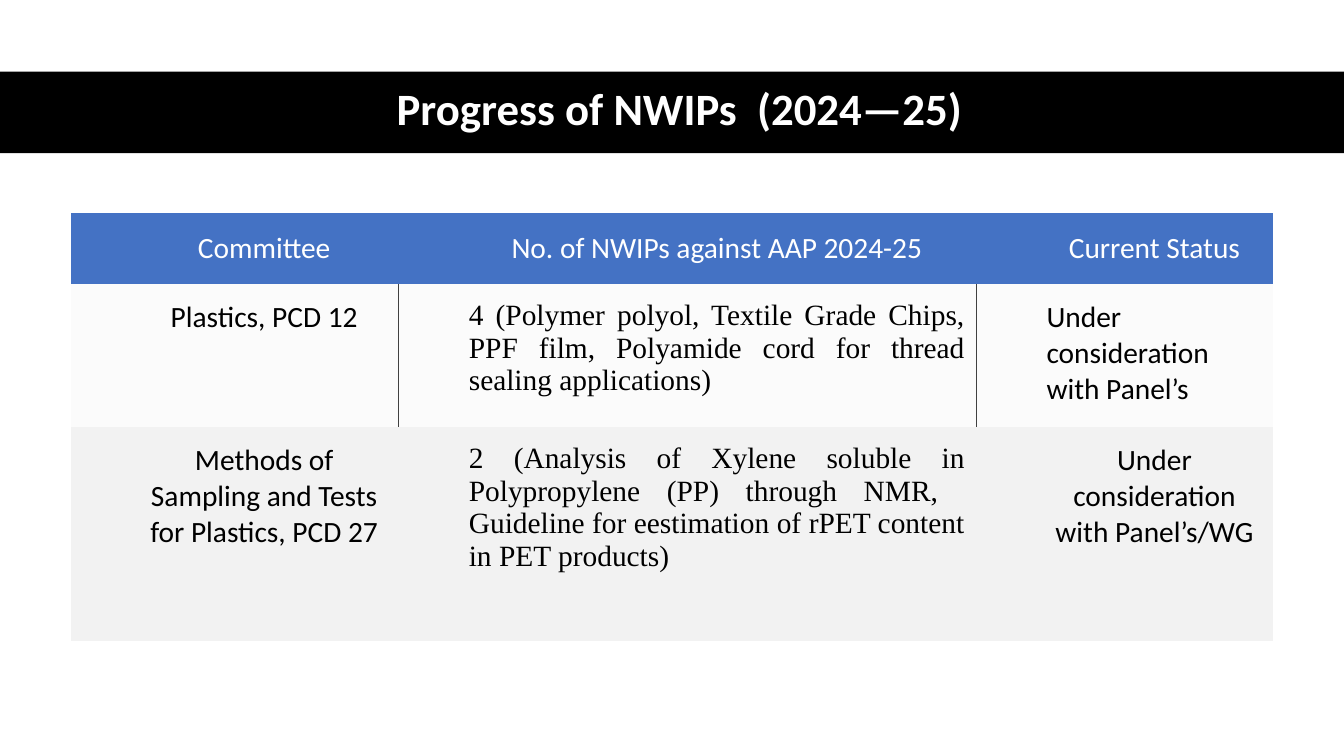
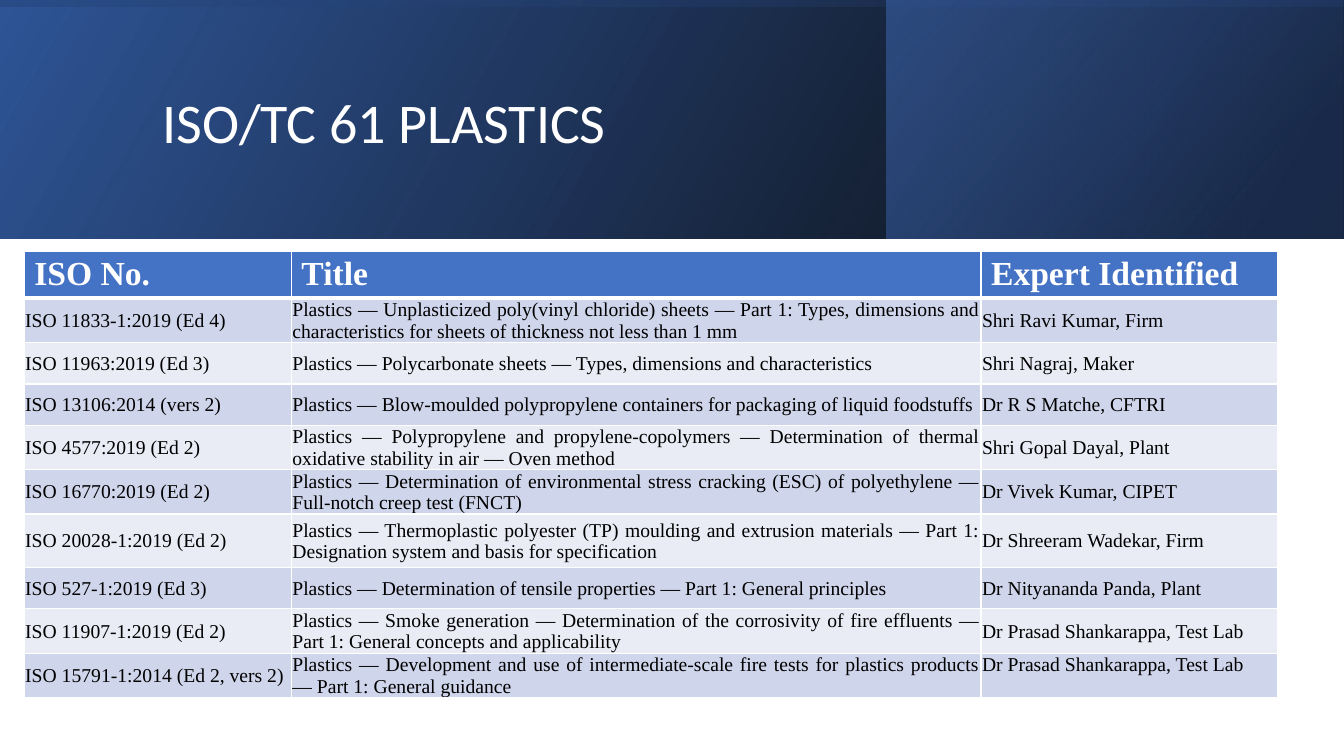
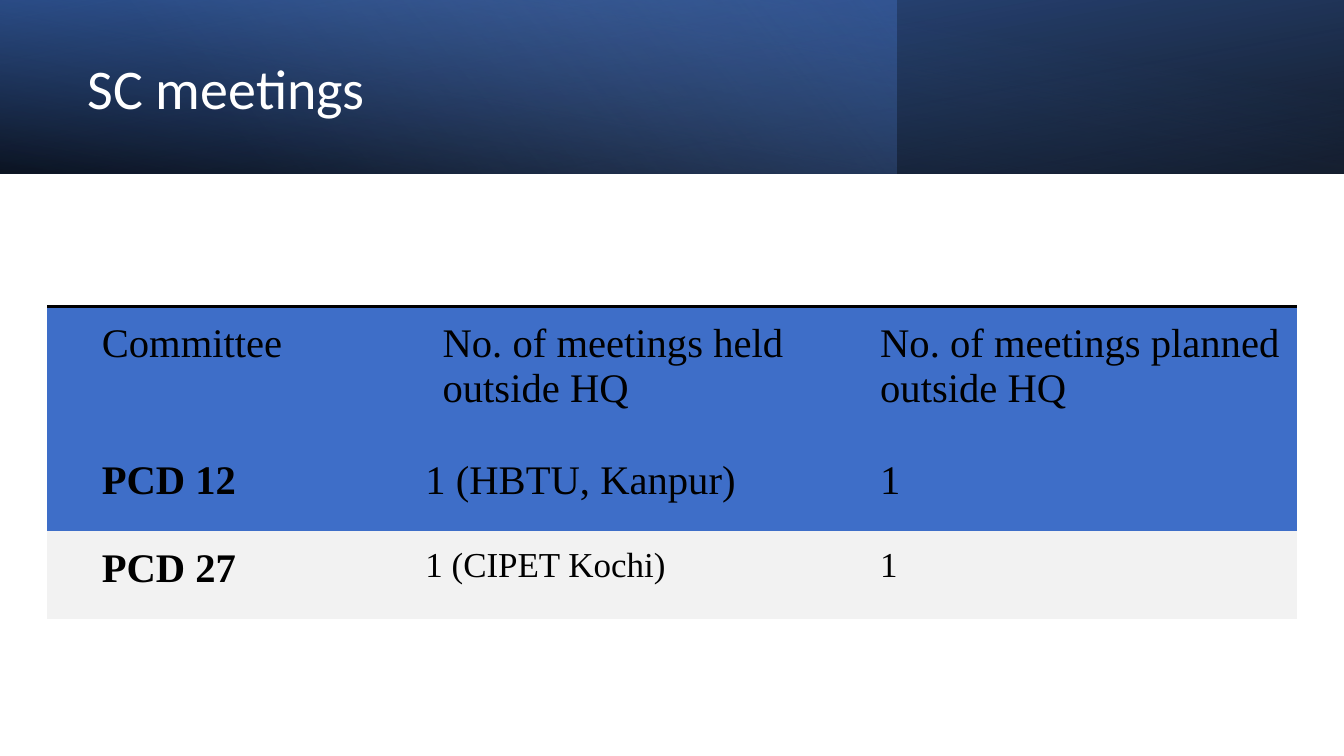
from lxml.etree import SubElement
from pptx import Presentation
from pptx.dml.color import RGBColor
from pptx.enum.shapes import MSO_SHAPE as Shape
from pptx.enum.text import MSO_ANCHOR as Anchor, MSO_AUTO_SIZE as AutoSize, PP_ALIGN as Align
from pptx.oxml.ns import qn
from pptx.util import Inches, Pt

SLIDE_W, SLIDE_H = 13.33, 7.5
TITLE_ONLY = 5
NO_GRID_STYLE = "{2D5ABB26-0587-4C30-8999-92F81FD0307C}"
SANS, SERIF = "Calibri", "Times New Roman"
COLORS = {
    "black": "000000", "white": "FFFFFF", "blue": "4472C4", "table_blue": "3E6EC8",
    "deep": "2F5597", "navy": "203864", "sky": "8FAADC", "rule": "404040",
    "pale": "FBFBFB", "grey": "F2F2F2", "band_dark": "CFD5EA", "band_light": "E9EBF5",
}
TITLE_FONT = {"name": SANS, "size": Pt(40), "bold": False}


def rgb(name):
    return RGBColor.from_string(COLORS[name])


def set_all(target, values):
    for name, value in values.items():
        setattr(target, name, value)


def place(shape, box):
    set_all(shape, dict(zip(("left", "top", "width", "height"), map(Inches, box))))


def write(para, text, color, font):
    span = para.add_run()
    span.text = text
    set_all(span.font, font)
    span.font.color.rgb = rgb(color)


# Title and banner parts
def add_title(page, box, text, align=Align.LEFT, **font):
    title = page.shapes.title
    place(title, box)
    page.shapes._spTree.append(title._element)  # in front of the banner
    set_all(title.text_frame, {"vertical_anchor": Anchor.MIDDLE, "word_wrap": True,
                               "auto_size": AutoSize.NONE})
    para = title.text_frame.paragraphs[0]
    set_all(para, {"alignment": align, "line_spacing": 0.9})
    write(para, text, "white", {**TITLE_FONT, **font})


def add_band(page, box, rotation=0):
    left, top, width, height = box
    if rotation == 270:  # turned about its centre, so the sides change places
        left, top = left + (width - height) / 2, top + (height - width) / 2
        width, height = height, width
    band = page.shapes.add_shape(Shape.RECTANGLE, *map(Inches, (left, top, width, height)))
    band.rotation = rotation
    band.shadow.inherit = False
    band.line.fill.background()
    return band


def fill_gradient(band, stops, angle):
    band.fill.background()
    properties = band._element.spPr
    empty = properties.find(qn("a:noFill"))
    gradient = SubElement(properties, qn("a:gradFill"), rotWithShape="1")
    properties.replace(empty, gradient)
    stop_list = SubElement(gradient, qn("a:gsLst"))
    for position, color, opacity in stops:
        stop = SubElement(stop_list, qn("a:gs"), pos=str(position * 1000))
        tone = SubElement(stop, qn("a:srgbClr"), val=COLORS[color])
        SubElement(tone, qn("a:alpha"), val=str(opacity * 1000))
    SubElement(gradient, qn("a:lin"), ang=str(angle * 60000), scaled="0")


def add_banner(page, height, layers):
    """Layers: left and right end as shares of the width, rotation, flip, angle, stops."""
    for start, end, rotation, flip, angle, stops in layers:
        box = (start * SLIDE_W, 0, (end - start) * SLIDE_W, height)
        band = add_band(page, box, rotation)
        fill_gradient(band, stops, angle)
        if flip:
            band._element.spPr.xfrm.set("flipH", "1")


# Table parts
def add_border(cell, side, color, width):
    line = SubElement(cell._tc.get_or_add_tcPr(), qn(f"a:ln{side}"), w=str(Pt(width)))
    fill = SubElement(line, qn("a:solidFill"))
    SubElement(fill, qn("a:srgbClr"), val=COLORS[color])


def fill_cell(cell, text, look):
    for side in "LRTB":
        if side in look["borders"]:
            add_border(cell, side, *look["borders"][side])
    cell.fill.solid()
    cell.fill.fore_color.rgb = rgb(look["fill"])
    sides = ("margin_left", "margin_top", "margin_right", "margin_bottom")
    set_all(cell, dict(zip(sides, map(Inches, look["insets"]))))
    cell.vertical_anchor = look["anchor"]
    para = cell.text_frame.paragraphs[0]
    para.alignment = look["align"]
    para._p.get_or_add_pPr().set("marL", str(Inches(look["indent"])))
    write(para, text, look["color"],
          {"name": look["font"], "size": Pt(look["size"]), "bold": look["bold"]})


def add_grid(page, corner, widths, heights, rows, style):
    """style(row, column) gives the look of one cell."""
    box = (*corner, sum(widths), sum(heights))
    table = page.shapes.add_table(len(rows), len(widths), *map(Inches, box)).table
    table._tbl.tblPr.find(qn("a:tableStyleId")).text = NO_GRID_STYLE
    table.horz_banding = False
    for column, width in zip(table.columns, widths):
        column.width = Inches(width)
    for row, height in zip(table.rows, heights):
        row.height = Inches(height)
    for r, texts in enumerate(rows):
        for c, text in enumerate(texts):
            fill_cell(table.cell(r, c), text, style(r, c))


# Progress slide
def progress_style(row, column):
    serif = row > 0 and column == 1
    borders = {}
    if row == 1:
        rule = ("rule", 0.5)
        borders = ({"R": rule}, {"L": rule, "R": rule}, {"L": rule})[column]
    return {
        "fill": ("blue", "pale", "grey")[row],
        "color": "black" if row else "white",
        "font": SERIF if serif else SANS, "size": 21, "bold": False,
        "align": Align.JUSTIFY if serif or (row, column) == (1, 2) else Align.CENTER,
        "anchor": Anchor.TOP if row else Anchor.MIDDLE,
        "insets": (0.2, 0.15, 0.11, 0.15), "indent": 0.5, "borders": borders,
    }


def build_progress(page):
    band = add_band(page, (0, 0.71, SLIDE_W, 0.81))
    band.fill.solid()
    band.fill.fore_color.rgb = rgb("black")
    add_title(page, (0.61, 0.7, 12.26, 0.81), "Progress of NWIPs  (2024—25)",
              Align.CENTER, size=Pt(32), bold=True)
    rows = [
        ("Committee", "No. of NWIPs against AAP 2024-25", "Current Status"),
        ("Plastics, PCD 12",
         "4 (Polymer polyol, Textile Grade Chips, PPF film, Polyamide cord for thread "
         "sealing applications)",
         "Under consideration with Panel’s"),
        ("Methods of Sampling and Tests for Plastics, PCD 27",
         "2 (Analysis of Xylene soluble in Polypropylene (PP) through NMR,  Guideline for "
         "eestimation of rPET content in PET products)",
         "Under consideration with Panel’s/WG"),
    ]
    add_grid(page, (0.7, 2.11), (3.25, 5.73, 2.95), (0.71, 1.42, 2.12), rows, progress_style)


# Standards slide
STANDARDS = [
    ("ISO No.", "Title", "Expert Identified"),
    ("ISO 11833-1:2019 (Ed 4)",
     "Plastics — Unplasticized poly(vinyl chloride) sheets — Part 1: Types, dimensions and "
     "characteristics for sheets of thickness not less than 1 mm", "Shri Ravi Kumar, Firm"),
    ("ISO 11963:2019 (Ed 3)",
     "Plastics — Polycarbonate sheets — Types, dimensions and characteristics",
     "Shri Nagraj, Maker"),
    ("ISO 13106:2014 (vers 2)",
     "Plastics — Blow-moulded polypropylene containers for packaging of liquid foodstuffs",
     "Dr R S Matche, CFTRI"),
    ("ISO 4577:2019 (Ed 2)",
     "Plastics — Polypropylene and propylene-copolymers — Determination of thermal oxidative "
     "stability in air — Oven method", "Shri Gopal Dayal, Plant"),
    ("ISO 16770:2019 (Ed 2)",
     "Plastics — Determination of environmental stress cracking (ESC) of polyethylene — "
     "Full-notch creep test (FNCT)", "Dr Vivek Kumar, CIPET"),
    ("ISO 20028-1:2019 (Ed 2)",
     "Plastics — Thermoplastic polyester (TP) moulding and extrusion materials — Part 1: "
     "Designation system and basis for specification", "Dr Shreeram Wadekar, Firm"),
    ("ISO 527-1:2019 (Ed 3)",
     "Plastics — Determination of tensile properties — Part 1: General principles",
     "Dr Nityananda Panda, Plant"),
    ("ISO 11907-1:2019 (Ed 2)",
     "Plastics — Smoke generation — Determination of the corrosivity of fire effluents — "
     "Part 1: General concepts and applicability", "Dr Prasad Shankarappa, Test Lab"),
    ("ISO 15791-1:2014 (Ed 2, vers 2)",
     "Plastics — Development and use of intermediate-scale fire tests for plastics products — "
     "Part 1: General guidance", "Dr Prasad Shankarappa, Test Lab"),
]


def standards_style(row, column):
    look = {"font": SERIF, "indent": 0, "borders": dict.fromkeys("LRTB", ("white", 1))}
    if row == 0:
        look["borders"]["B"] = ("white", 3)
        return {**look, "fill": "blue", "color": "white", "size": 24, "bold": True,
                "align": Align.LEFT, "anchor": Anchor.TOP, "insets": (0.1, 0.05, 0.1, 0.05)}
    if row == 1:
        look["borders"]["T"] = ("white", 3)
    last = (row, column) == (len(STANDARDS) - 1, 2)
    return {**look, "fill": "band_dark" if row % 2 else "band_light", "color": "black",
            "size": 14, "bold": False, "align": Align.JUSTIFY,
            "anchor": Anchor.TOP if last else Anchor.MIDDLE, "insets": (0.01, 0.01, 0.01, 0)}


def build_standards(page):
    add_banner(page, 2.37, [
        (0, 1, 0, True, 330, [(0, "black", 96), (100, "deep", 100)]),
        (0.66, 1, 0, True, 320, [(19, "navy", 68), (100, "blue", 48)]),
        (0, 1, 270, True, 350, [(23, "deep", 16), (99, "black", 45)]),
    ])
    add_title(page, (1.51, 0.38, 10.63, 1.72), "ISO/TC 61 PLASTICS")
    heights = [0.53 if row == 6 else 0.41 for row in range(len(STANDARDS))]
    add_grid(page, (0.24, 2.49), (2.65, 6.84, 2.94), heights, STANDARDS, standards_style)


# Meetings slide
def meetings_style(row, column):
    side = 0.21 if (row, column) == (0, 1) else 0.04
    return {
        "fill": "grey" if row == 2 else "table_blue", "color": "black", "font": SERIF,
        "size": 25 if row == 2 and column else 29, "bold": row > 0 and column == 0,
        "align": Align.LEFT, "anchor": Anchor.TOP, "insets": (side, 0.15, side, 0.15),
        "indent": 0.5, "borders": {} if row else {"T": ("black", 2.25)},
    }


def build_meetings(page):
    add_banner(page, 1.72, [
        (0, 1, 180, True, 100, [(0, "black", 96), (100, "deep", 100)]),
        (0, 0.667, 0, False, 140, [(0, "blue", 41), (74, "sky", 0)]),
        (0, 1, 0, True, 260, [(0, "black", 63), (78, "blue", 15)]),
    ])
    add_title(page, (0.77, 0.27, 7.72, 1.27), "SC meetings")
    rows = [
        ("Committee", "No. of meetings held outside HQ", "No. of meetings planned outside HQ"),
        ("PCD 12", "1 (HBTU, Kanpur)", "1"),
        ("PCD 27", "1 (CIPET Kochi)", "1"),
    ]
    add_grid(page, (0.47, 3.04), (3.21, 4.51, 4.67), (1.36, 0.87, 0.87), rows, meetings_style)


def main():
    deck = Presentation()
    deck.slide_width, deck.slide_height = Inches(SLIDE_W), Inches(SLIDE_H)
    for build in (build_progress, build_standards, build_meetings):
        build(deck.slides.add_slide(deck.slide_layouts[TITLE_ONLY]))
    deck.save("out.pptx")


if __name__ == "__main__":
    main()
